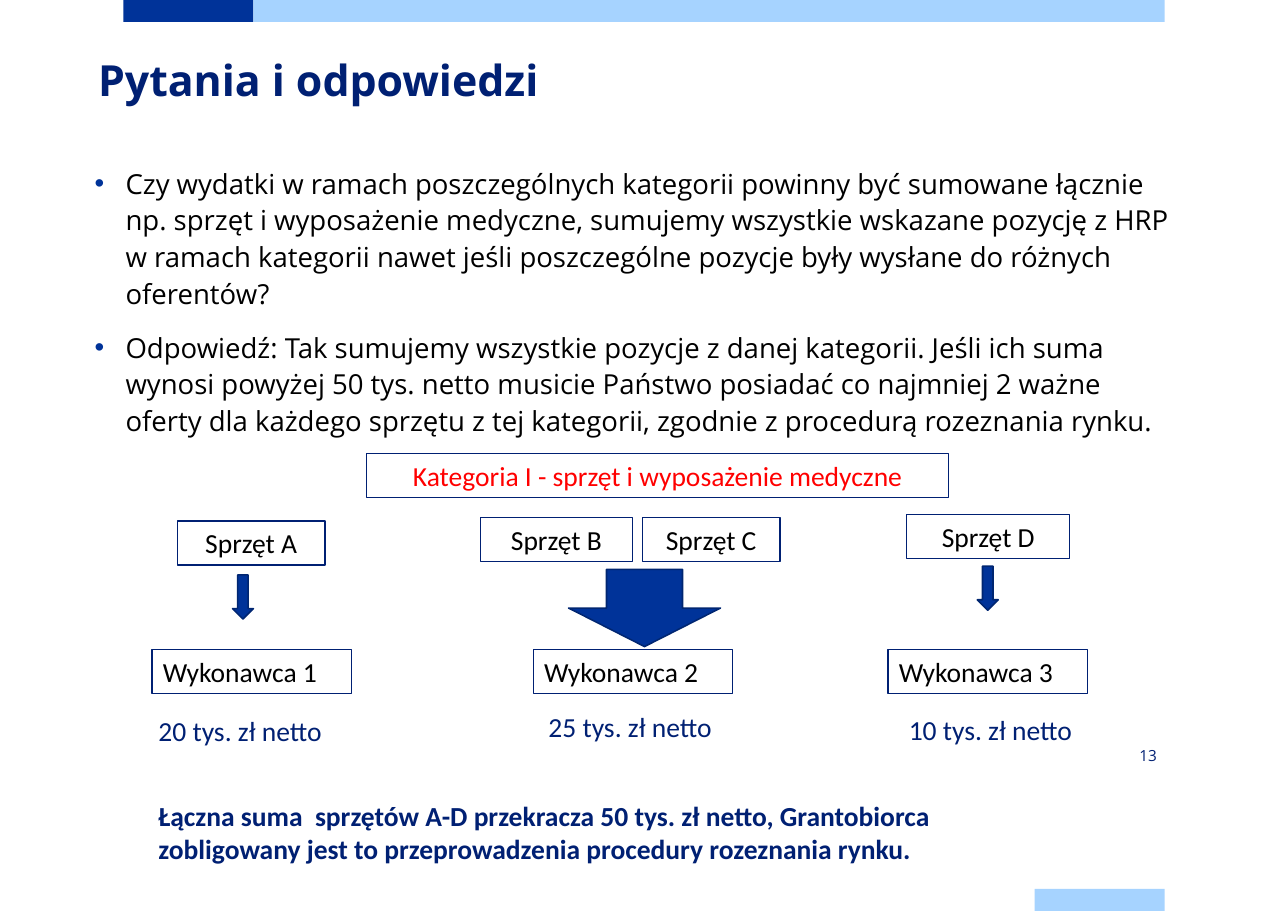
import pptx
import pptx.util
import pptx.dml.color
import pptx.enum.shapes
import pptx.enum.text
import pptx.oxml
import pptx.oxml.ns
from pptx.util import Inches

# Content
TITLE = "Pytania i odpowiedzi"
QUESTIONS = [
    "Czy wydatki w ramach poszczególnych kategorii powinny być sumowane łącznie "
    "np. sprzęt i wyposażenie medyczne, sumujemy wszystkie wskazane pozycję z HRP "
    "w ramach kategorii nawet jeśli poszczególne pozycje były wysłane do różnych oferentów?",
    "Odpowiedź: Tak sumujemy wszystkie pozycje z danej kategorii. Jeśli ich suma "
    "wynosi powyżej 50 tys. netto musicie Państwo posiadać co najmniej 2 ważne "
    "oferty dla każdego sprzętu z tej kategorii, zgodnie z procedurą rozeznania rynku.",
]
CATEGORY = "Kategoria I - sprzęt i wyposażenie medyczne"
SUMMARY = ("Łączna suma  sprzętów A-D przekracza 50 tys. zł netto, Grantobiorca "
           "zobligowany jest to przeprowadzenia procedury rozeznania rynku.")
PAGE = "13"

COLORS = {"navy": "002073", "blue": "003399", "sky": "A6D3FF",
          "edge": "002671", "black": "000000", "red": "FF0000"}
BARS = [(1.12, 0, 1.18, "blue"), (2.3, 0, 8.27, "sky"), (9.39, 8.07, 1.18, "sky")]
BAR_H = 0.2
BOX_H = 0.4
CONTRACTOR_TOP, CONTRACTOR_W = 5.9, 1.81
AMOUNT_W = 1.76
# label, left, top, width
EQUIPMENT = [("Sprzęt A", 1.61, 4.73, 1.34), ("Sprzęt B", 4.36, 4.7, 1.38),
             ("Sprzęt C", 5.83, 4.7, 1.25), ("Sprzęt D", 8.23, 4.67, 1.48)]
# contractor, left, amount, amount left and top, arrow box
CONTRACTORS = [
    ("Wykonawca 1", 1.38, "20 tys. zł netto", (1.34, 6.43), (2.11, 5.22, 0.19, 0.4)),
    ("Wykonawca 2", 4.84, "25 tys. zł netto", (4.88, 6.4), (5.16, 5.17, 1.38, 0.7)),
    ("Wykonawca 3", 8.06, "10 tys. zł netto", (8.15, 6.42), (8.87, 5.14, 0.19, 0.4)),
]

SHAPE = pptx.enum.shapes.MSO_SHAPE
ALIGN = pptx.enum.text.PP_ALIGN
ANCHOR = pptx.enum.text.MSO_ANCHOR

prs = pptx.Presentation()
prs.slide_width, prs.slide_height = Inches(11.69), Inches(8.27)
slide = prs.slides.add_slide(prs.slide_layouts[6])


def rgb(name):
    return pptx.dml.color.RGBColor.from_string(COLORS[name])


def add_shape(kind, box, fill=None, line=None, width=0.75):
    sp = slide.shapes.add_shape(kind, *map(Inches, box))
    sp.shadow.inherit = False
    if fill:
        sp.fill.solid()
        sp.fill.fore_color.rgb = rgb(fill)
    else:
        sp.fill.background()
    if line:
        sp.line.color.rgb = rgb(line)
        sp.line.width = pptx.util.Pt(width)
    else:
        sp.line.fill.background()
    return sp


def add_bullet(p):
    pPr = p._p.get_or_add_pPr()
    pPr.set("marL", str(Inches(0.28)))
    pPr.set("indent", str(-Inches(0.28)))
    ns = pptx.oxml.ns.nsdecls("a")
    for xml in (f'<a:buClr {ns}><a:srgbClr val="{COLORS["blue"]}"/></a:buClr>',
                f'<a:buFont {ns} typeface="Arial"/>',
                f'<a:buChar {ns} char="•"/>'):
        pPr.append(pptx.oxml.parse_xml(xml))


def put_text(sp, *texts, font="Calibri", size=18, color="black", bold=False,
             align=ALIGN.LEFT, anchor=ANCHOR.TOP, insets=(0.1, 0.05),
             wrap=True, leading=None, before=0, bullet=False):
    tf = sp.text_frame
    tf.word_wrap = wrap
    tf.vertical_anchor = anchor
    tf.margin_left = tf.margin_right = Inches(insets[0])
    tf.margin_top = tf.margin_bottom = Inches(insets[1])
    for i, text in enumerate(texts):
        p = tf.add_paragraph() if i else tf.paragraphs[0]
        p.alignment = align
        if leading:
            p.line_spacing = pptx.util.Pt(leading)
        if i and before:
            p.space_before = pptx.util.Pt(before)
        if bullet:
            add_bullet(p)
        r = p.add_run()
        r.text = text
        r.font.name, r.font.size, r.font.bold = font, pptx.util.Pt(size), bold
        r.font.color.rgb = rgb(color)


def add_text(box, *texts, **fmt):
    put_text(slide.shapes.add_textbox(*map(Inches, box)), *texts, **fmt)


def add_box(text, left, top, width, **fmt):
    sp = add_shape(SHAPE.RECTANGLE, (left, top, width, BOX_H), line="navy")
    put_text(sp, text, **fmt)


# Top and bottom bars
for left, top, width, fill in BARS:
    add_shape(SHAPE.RECTANGLE, (left, top, width, BAR_H), fill=fill)

# Title, question and answer, page number
add_text((0.89, 0.45, 9.45, 1.18), TITLE, font="Open Sans", size=28, color="navy",
         bold=True, insets=(0, 0), leading=36)
add_text((0.86, 1.48, 9.76, 5.51), *QUESTIONS, font="Open Sans", insets=(0, 0),
         leading=24, before=11, bullet=True)
add_text((9.32, 6.76, 1.18, 0.2), PAGE, font="Open Sans", size=10, color="navy",
         align=ALIGN.RIGHT, anchor=ANCHOR.MIDDLE, insets=(0, 0))

# Category and its equipment
add_box(CATEGORY, 3.33, 4.12, 5.28, color="red", align=ALIGN.CENTER)
for label, left, top, width in EQUIPMENT:
    add_box(label, left, top, width, align=ALIGN.CENTER)

# Arrows, contractors and amounts
for name, left, amount, amount_at, arrow in CONTRACTORS:
    add_shape(SHAPE.DOWN_ARROW, arrow, fill="blue", line="edge", width=1)
    add_box(name, left, CONTRACTOR_TOP, CONTRACTOR_W)
    add_text((*amount_at, AMOUNT_W, BOX_H), amount, color="navy", wrap=False)

# Summary
add_text((1.34, 7.2, 8.37, 0.71), SUMMARY, color="navy", bold=True)

prs.save("out.pptx")
